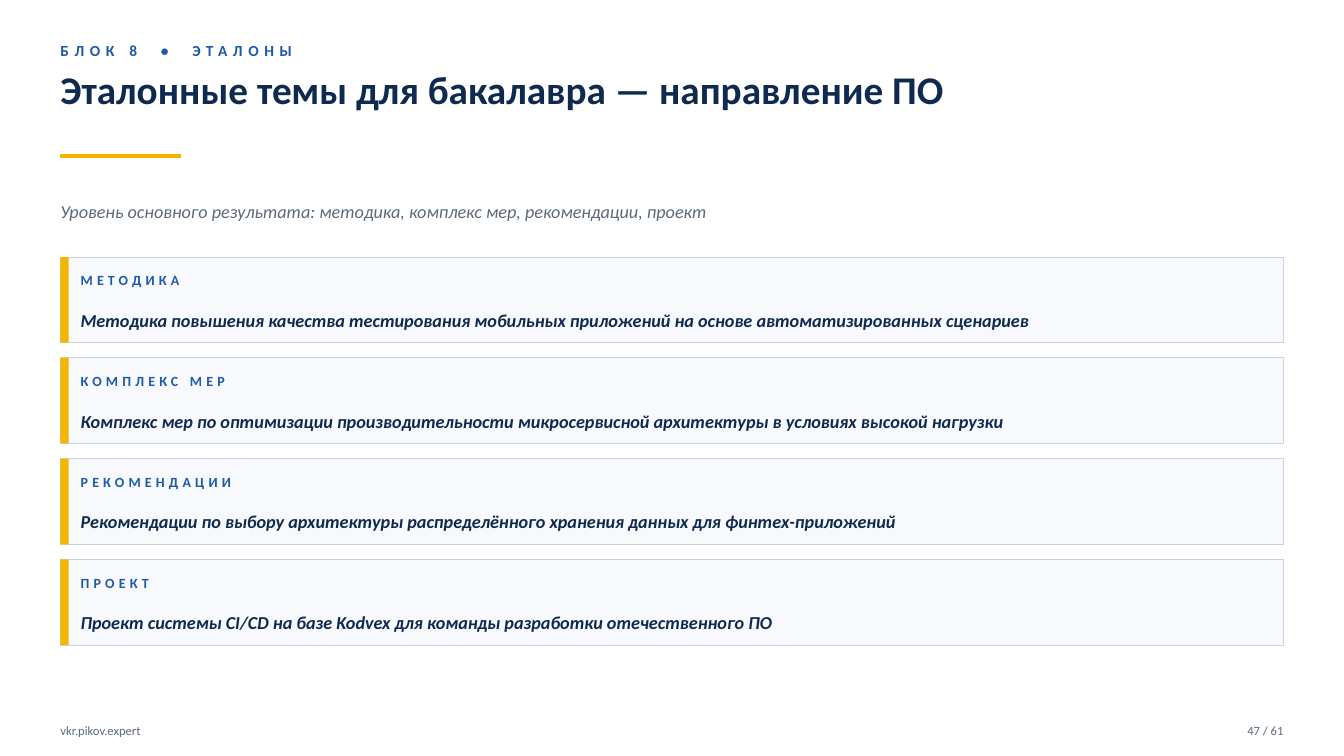
from dataclasses import dataclass

from lxml.etree import SubElement
from pptx import Presentation
from pptx.dml.color import RGBColor
from pptx.enum.shapes import MSO_CONNECTOR, MSO_SHAPE
from pptx.enum.text import MSO_ANCHOR, PP_ALIGN
from pptx.oxml.ns import qn
from pptx.util import Inches, Pt


@dataclass(frozen=True)
class TextStyle:
    size: int
    color: str
    bold: bool = False
    italic: bool = False
    spacing: int = 0  # points between letters


@dataclass(frozen=True)
class Theme:
    font: str = "Calibri"
    background: str = "FFFFFF"
    accent: str = "F4B400"
    card: str = "F7F9FC"
    border: str = "C9D3E0"
    section: TextStyle = TextStyle(11, "1E5AA7", bold=True, spacing=4)
    title: TextStyle = TextStyle(28, "0F2A4F", bold=True)
    subtitle: TextStyle = TextStyle(13, "5C6B7A", italic=True)
    category: TextStyle = TextStyle(10, "1E5AA7", bold=True, spacing=3)
    topic: TextStyle = TextStyle(13, "0F2A4F", bold=True, italic=True)
    footer: TextStyle = TextStyle(9, "5C6B7A")


THEME = Theme()

# Grid: columns of 0.2 in and rows of 0.05 in
COLUMN, ROW = 0.2, 0.05
SLIDE_COLUMNS, SLIDE_ROWS = 66.65, 150
MARGIN = 3
CONTENT_COLUMNS = SLIDE_COLUMNS - 2 * MARGIN
CARDS_TOP, CARD_ROWS, CARD_PITCH = 51, 17, 20

TOPICS = [
    ("МЕТОДИКА", "Методика повышения качества тестирования мобильных приложений "
                 "на основе автоматизированных сценариев"),
    ("КОМПЛЕКС МЕР", "Комплекс мер по оптимизации производительности "
                     "микросервисной архитектуры в условиях высокой нагрузки"),
    ("РЕКОМЕНДАЦИИ", "Рекомендации по выбору архитектуры распределённого "
                     "хранения данных для финтех-приложений"),
    ("ПРОЕКТ", "Проект системы CI/CD на базе Kodvex для команды разработки "
               "отечественного ПО"),
]


def cols(count):
    return Inches(count * COLUMN)


def rows(count):
    return Inches(count * ROW)


def area(left, top, width, height):
    return cols(left), rows(top), cols(width), rows(height)


def rgb(color):
    return RGBColor.from_string(color)


def add_text(slide, place, text, style, anchor=MSO_ANCHOR.MIDDLE, align=PP_ALIGN.LEFT):
    frame = slide.shapes.add_textbox(*area(*place)).text_frame
    frame.word_wrap = True
    frame.vertical_anchor = anchor
    frame.margin_left = frame.margin_right = 0
    frame.margin_top = frame.margin_bottom = 0
    frame.text = text
    paragraph = frame.paragraphs[0]
    paragraph.alignment = align
    for run in paragraph.runs:
        run.font.name = THEME.font
        run.font.size = Pt(style.size)
        run.font.bold = style.bold
        run.font.italic = style.italic
        run.font.color.rgb = rgb(style.color)
        if style.spacing:
            run.font._element.set("spc", str(style.spacing * 100))


def add_rectangle(slide, place, fill, border=None):
    rectangle = slide.shapes.add_shape(MSO_SHAPE.RECTANGLE, *area(*place))
    rectangle.shadow.inherit = False
    rectangle.fill.solid()
    rectangle.fill.fore_color.rgb = rgb(fill)
    if border:
        rectangle.line.color.rgb = rgb(border)
        rectangle.line.width = Pt(0.5)
    else:
        rectangle.line.fill.background()


def add_rule(slide, left, top, width):
    rule = slide.shapes.add_connector(
        MSO_CONNECTOR.STRAIGHT, cols(left), rows(top), cols(left + width), rows(top))
    rule.line.color.rgb = rgb(THEME.accent)
    rule.line.width = Pt(3)
    SubElement(rule._element.spPr, qn("a:effectLst"))


def add_card(slide, top, category, topic):
    text_left = MARGIN + 1
    add_rectangle(slide, (MARGIN, top, CONTENT_COLUMNS, CARD_ROWS), THEME.card, THEME.border)
    add_rectangle(slide, (MARGIN, top, 0.4, CARD_ROWS), THEME.accent)
    add_text(slide, (text_left, top + 1.6, 8, 6), category, THEME.category)
    add_text(slide, (text_left, top + 8, CONTENT_COLUMNS - 2, 9), topic, THEME.topic)


def main():
    presentation = Presentation()
    presentation.slide_width = cols(SLIDE_COLUMNS)
    presentation.slide_height = rows(SLIDE_ROWS)
    slide = presentation.slides.add_slide(presentation.slide_layouts[6])
    slide.background.fill.solid()
    slide.background.fill.fore_color.rgb = rgb(THEME.background)

    # Heading
    add_text(slide, (MARGIN, 7, 30, 6), "БЛОК 8  •  ЭТАЛОНЫ", THEME.section)
    add_text(slide, (MARGIN, 13, CONTENT_COLUMNS, 17),
             "Эталонные темы для бакалавра — направление ПО", THEME.title, MSO_ANCHOR.TOP)
    add_rule(slide, MARGIN, 31, 6)
    add_text(slide, (MARGIN, 37, CONTENT_COLUMNS, 10),
             "Уровень основного результата: методика, комплекс мер, рекомендации, проект",
             THEME.subtitle)

    # Topic cards
    for index, (category, topic) in enumerate(TOPICS):
        add_card(slide, CARDS_TOP + index * CARD_PITCH, category, topic)

    # Footer
    add_text(slide, (MARGIN, 142, 20, 6), "vkr.pikov.expert", THEME.footer)
    add_text(slide, (SLIDE_COLUMNS - MARGIN - 5, 142, 5, 6), "47 / 61", THEME.footer,
             align=PP_ALIGN.RIGHT)

    presentation.save("out.pptx")


if __name__ == "__main__":
    main()
